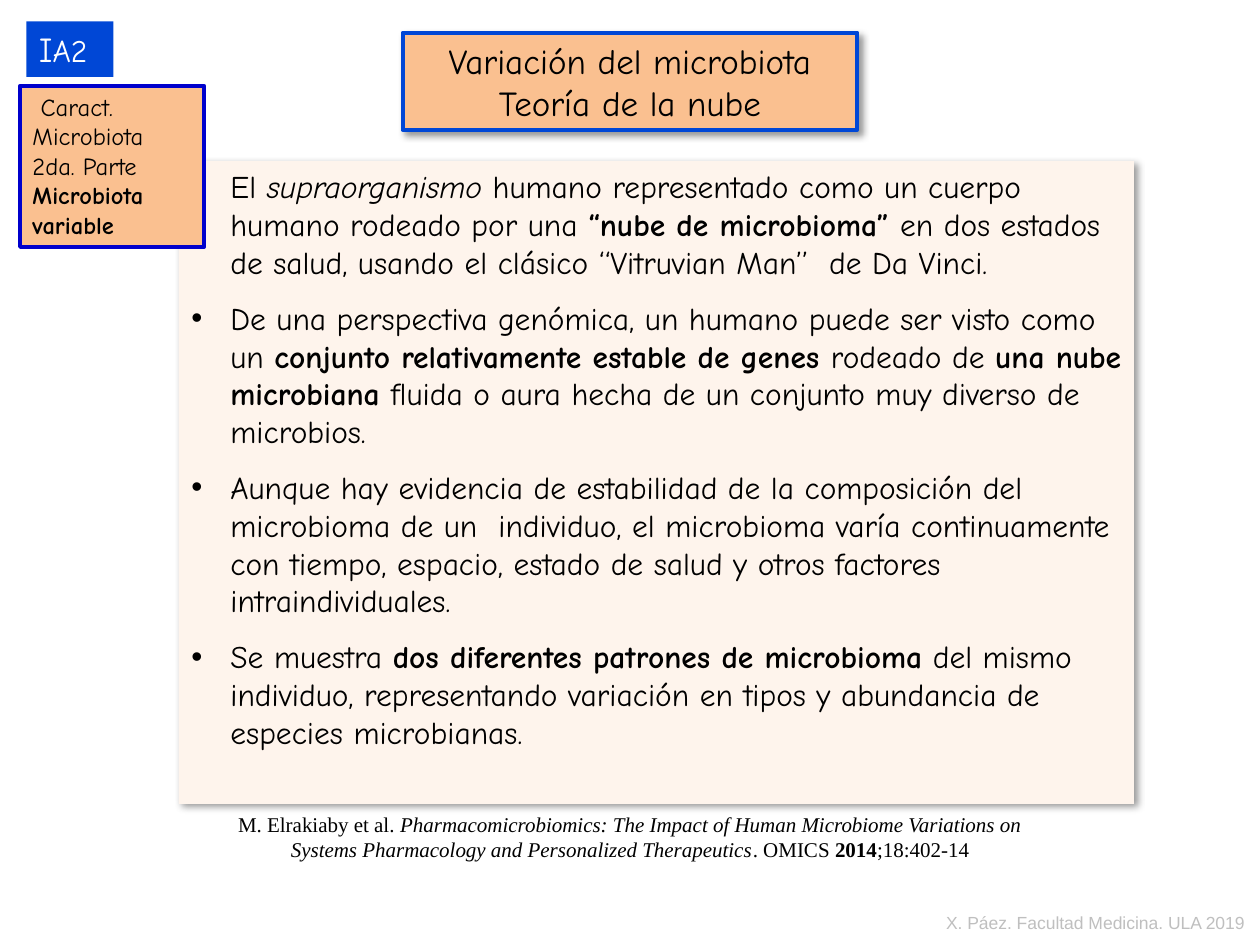
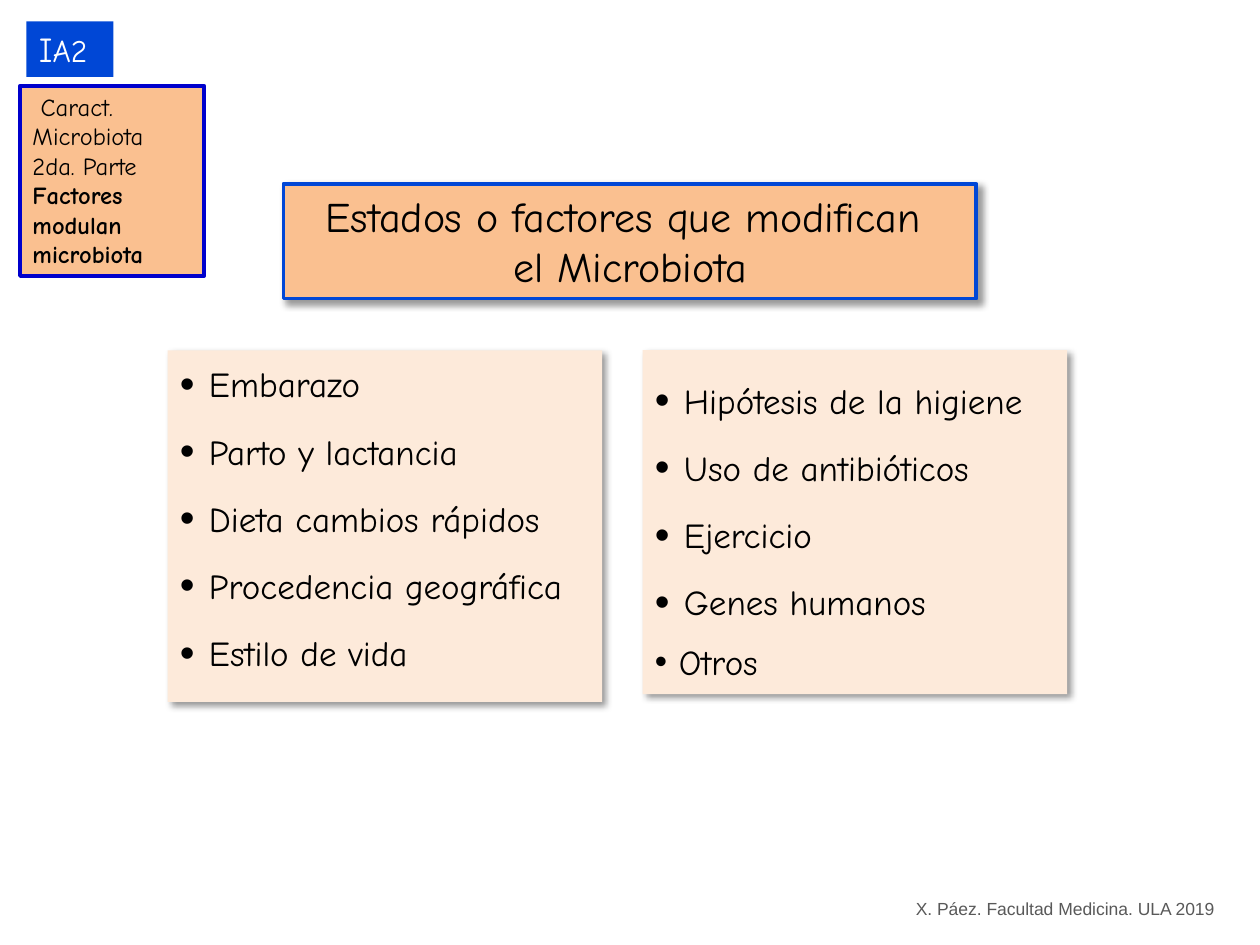
from lxml import etree
from pptx import Presentation
from pptx.dml.color import RGBColor
from pptx.enum.shapes import MSO_SHAPE
from pptx.enum.text import MSO_ANCHOR, MSO_AUTO_SIZE, PP_ALIGN
from pptx.oxml.ns import qn
from pptx.util import Inches, Pt

RECTANGLE = MSO_SHAPE.RECTANGLE
TOP = MSO_ANCHOR.TOP
FIXED = MSO_AUTO_SIZE.NONE
LEFT, CENTER = PP_ALIGN.LEFT, PP_ALIGN.CENTER

WIDTH, HEIGHT = 10, 7.5
TITLE_ONLY = 5
HAND, SANS, SERIF = "Comic Neue", "Arial", "Times New Roman"
BLUE, NAVY, ORANGE = "0047D6", "0000CC", "FAC090"
CREAM, PEACH = "FEF4EC", "FDEADA"
BLACK, WHITE = "000000", "FFFFFF"


def frame(box, at, fill=None, line=None, shadow=False):
    """Place a box and give it its fill, outline and shadow."""
    box.left, box.top, box.width, box.height = [Inches(length) for length in at]
    if fill:
        box.fill.solid()
        box.fill.fore_color.rgb = RGBColor.from_string(fill)
    if line:
        box.line.color.rgb = RGBColor.from_string(line)
        box.line.width = Pt(2.25)
    else:
        box.line.fill.background()
    box.shadow.inherit = False
    if shadow:
        effects = box._element.spPr.find(qn("a:effectLst"))
        outer = etree.SubElement(effects, qn("a:outerShdw"), blurRad=str(Pt(4)),
                                 dist=str(Pt(3)), dir="2700000", algn="tl", rotWithShape="0")
        tint = etree.SubElement(outer, qn("a:srgbClr"), val=BLACK)
        etree.SubElement(tint, qn("a:alpha"), val="40000")
    return box


def write(box, paragraphs, size, font=HAND, color=BLACK, align=LEFT, indent=0,
          bullet_share=100, gap=0, inset=0.05, wrap=True):
    """Write paragraphs of (text, style) spans; a style is b, i or a point size."""
    text = box.text_frame
    text.auto_size, text.word_wrap, text.vertical_anchor = FIXED, wrap, TOP
    text.margin_top = Inches(inset)
    for number, spans in enumerate(paragraphs):
        para = text.paragraphs[0] if number == 0 else text.add_paragraph()
        if indent:
            props = para._p.get_or_add_pPr()
            props.set("marL", str(Inches(indent)))
            props.set("indent", str(-Inches(indent)))
            etree.SubElement(props, qn("a:buSzPct"), val=str(bullet_share * 1000))
            etree.SubElement(props, qn("a:buFont"), typeface=SANS)
            etree.SubElement(props, qn("a:buChar"), char="•")
        para.alignment = align
        para.space_before = Pt(gap if number else 0)
        for words, style in spans:
            span = para.add_run()
            span.text = words
            span.font.name = font
            span.font.size = Pt(style if isinstance(style, int) else size)
            span.font.bold = style == "b"
            span.font.italic = style == "i"
            span.font.color.rgb = RGBColor.from_string(color)


deck = Presentation()
deck.slide_width, deck.slide_height = Inches(WIDTH), Inches(HEIGHT)

# What differs between the slides in the shared parts
pages = []
for title, title_size, title_box, topic, topic_height, footer_at, footer_color in [
    (["Variación del microbiota", "Teoría de la nube"], 20, (0.26, 3.61, 0.77),
     "Microbiota variable", 1.28, (7.41, 7.19), "BFBFBF"),
    (["Estados o factores que modifican ", "el Microbiota"], 24, (1.46, 5.5, 0.91),
     "Factores modulan microbiota", 1.51, (7.17, 7.08), "595959"),
]:
    page = deck.slides.add_slide(deck.slide_layouts[TITLE_ONLY])
    pages.append(page)

    # Title, centred on the slide
    top, width, height = title_box
    heading = frame(page.shapes.title, ((WIDTH - width) / 2, top, width, height),
                    ORANGE, BLUE, shadow=True)
    write(heading, [[(row, "")] for row in title], title_size, align=CENTER)

    # Footer
    footer = frame(page.shapes.add_textbox(0, 0, 0, 0), (*footer_at, 2.59, 0.27))
    write(footer, [[("X. Páez. Facultad Medicina. ULA 2019", "")]], 10, SANS,
          footer_color, wrap=False)

# Slide 1: the microbial cloud
cloud_page, factors_page = pages
cloud = frame(cloud_page.shapes.add_shape(RECTANGLE, 0, 0, 0, 0),
              (1.42, 1.28, 7.58, 5.1), CREAM, shadow=True)
write(cloud, [
    [("El ", ""), ("supraorganismo ", "i"),
     ("humano representado como un cuerpo humano rodeado por una ", ""),
     ("“nube de microbioma” ", "b"),
     ("en dos estados de salud, usando el clásico ‘‘Vitruvian Man’’  de Da Vinci.", "")],
    [("De una perspectiva genómica, un humano puede ser visto como un ", ""),
     ("conjunto relativamente estable de genes ", "b"), ("rodeado de ", ""),
     ("una nube microbiana ", "b"),
     ("fluida o aura hecha de un conjunto muy diverso de microbios.", "")],
    [("Aunque hay evidencia de estabilidad de la composición del microbioma de un  "
      "individuo, el microbioma varía continuamente con tiempo, espacio, estado de "
      "salud y otros factores intraindividuales.", "")],
    [("Se muestra ", ""), ("dos diferentes patrones de microbioma", "b"),
     (" del mismo individuo, representando variación en tipos y abundancia de "
      "especies microbianas.", "")],
], 18, indent=0.31, gap=10.3)

citation = frame(cloud_page.shapes.add_textbox(0, 0, 0, 0), (1.74, 6.39, 6.52, 0.5))
write(citation, [[
    ("M. Elrakiaby et al. ", ""),
    ("Pharmacomicrobiomics: The Impact of Human Microbiome Variations on Systems "
     "Pharmacology and Personalized Therapeutics", "i"),
    (". OMICS ", ""), ("2014", "b"), (";18:402-14", ""),
]], 12, SERIF, align=CENTER)

# Slide 2: two lists of factors
for left, width, height, inset, factors in [
    (1.33, 3.45, 2.79, 0.1,
     ["Embarazo", "Parto y lactancia", "Dieta cambios rápidos",
      "Procedencia geográfica", "Estilo de vida"]),
    (5.1, 3.37, 2.73, 0.23,
     ["Hipótesis de la higiene", "Uso de antibióticos", "Ejercicio",
      "Genes humanos", "Otros"]),
]:
    panel = frame(factors_page.shapes.add_shape(RECTANGLE, 0, 0, 0, 0),
                  (left, 2.78, width, height), PEACH, shadow=True)
    write(panel, [[(factor, "")] for factor in factors], 20, indent=0.23,
          bullet_share=120, gap=14.4, inset=inset)

# The closing "Otros" sits tighter, with a smaller bullet
others = panel.text_frame.paragraphs[-1]
others.space_before = Pt(10)
others_props = others._p.get_or_add_pPr()
others_props.set("marL", str(Inches(0.19)))
others_props.set("indent", str(-Inches(0.19)))
others_props.find(qn("a:buSzPct")).set("val", "100000")

# Section tag and topic label, in front of the panels
for page, topic, topic_height in [
    (cloud_page, "Microbiota variable", 1.28),
    (factors_page, "Factores modulan microbiota", 1.51),
]:
    tag = frame(page.shapes.add_shape(RECTANGLE, 0, 0, 0, 0), (0.21, 0.17, 0.69, 0.44), BLUE)
    write(tag, [[("I", 20), ("A2", 18)]], 18, color=WHITE, wrap=False)
    label = frame(page.shapes.add_shape(RECTANGLE, 0, 0, 0, 0),
                  (0.16, 0.68, 1.46, topic_height), ORANGE, NAVY)
    write(label, [[(" Caract.", "")], [("Microbiota", "")], [("2da. Parte", "")],
                  [(topic, "b")]], 14)

deck.save("out.pptx")
